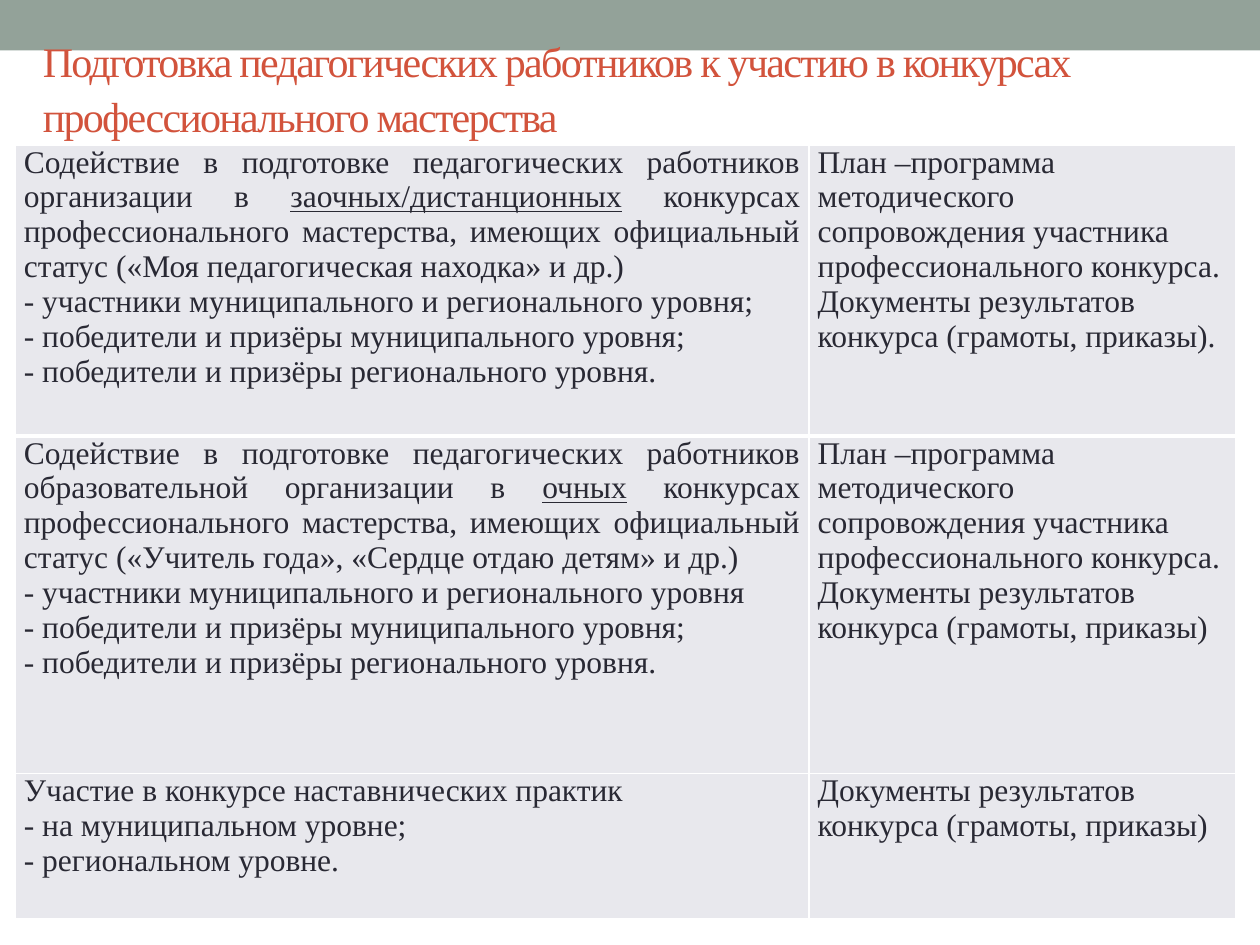
from dataclasses import dataclass

from lxml import etree
from pptx import Presentation
from pptx import util as u
from pptx.dml.color import RGBColor
from pptx.enum import shapes, text
from pptx.oxml import ns


@dataclass(frozen=True)
class Theme:
    font: str = "Times New Roman"
    bar: str = "93A299"
    title: str = "D2533C"
    body: str = "292934"
    cell: str = "E8E8ED"
    border: str = "FFFFFF"
    title_size: int = 24
    body_size: int = 18


theme = Theme()


def add_run(paragraph, words, size, color):
    run = paragraph.add_run()
    run.text = words
    run.font.name = theme.font
    run.font.size = u.Pt(size)
    run.font.color.rgb = RGBColor.from_string(color)
    return run


def set_borders(cell, widths):
    """Draw solid borders; widths maps the side letters L, R, T, B to points."""
    properties = cell._tc.get_or_add_tcPr()
    for position, side in enumerate("LRTB"):
        line = etree.Element(ns.qn(f"a:ln{side}"), w=str(u.Pt(widths[side])))
        fill = etree.SubElement(line, ns.qn("a:solidFill"))
        etree.SubElement(fill, ns.qn("a:srgbClr"), val=theme.border)
        properties.insert(position, line)


presentation = Presentation()
presentation.slide_width = u.Inches(10)
presentation.slide_height = u.Inches(7.5)
slide = presentation.slides.add_slide(presentation.slide_layouts[5])

# Title
title = slide.shapes.title
title.left, title.top = u.Inches(0.24), u.Inches(0.44)
title.width, title.height = u.Inches(9.72), u.Inches(0.49)
title.text_frame.word_wrap = True
title.text_frame.auto_size = text.MSO_AUTO_SIZE.NONE
title.text_frame.vertical_anchor = text.MSO_ANCHOR.MIDDLE
paragraph = title.text_frame.paragraphs[0]
paragraph.alignment = text.PP_ALIGN.LEFT
paragraph.line_spacing = 1.08
run = add_run(
    paragraph,
    "Подготовка педагогических работников к участию в конкурсах профессионального мастерства",
    theme.title_size, theme.title)
run.font._element.set("spc", "-100")

# Top bar, kept behind the title
bar = slide.shapes.add_shape(
    shapes.MSO_SHAPE.RECTANGLE, 0, 0, presentation.slide_width, u.Inches(0.4))
bar.shadow.inherit = False
bar.fill.solid()
bar.fill.fore_color.rgb = RGBColor.from_string(theme.bar)
bar.line.fill.background()
title._element.addprevious(bar._element)

# Table text: rows hold cells, cells hold paragraphs, paragraphs hold runs.
# The second run of a paragraph is the underlined one.
support = "Содействие в подготовке педагогических работников"
contests = " конкурсах профессионального мастерства, имеющих официальный статус"
participants = "- участники муниципального и регионального уровня"
winners = [["- победители и призёры муниципального уровня;"],
           ["- победители и призёры регионального уровня."]]
plan = "План –программа методического сопровождения участника профессионального конкурса."
documents = "Документы результатов конкурса (грамоты, приказы)"

rows = [
    ([[f"{support} организации в ", "заочных/дистанционных",
       f"{contests} («Моя педагогическая находка» и др.)"],
      [f"{participants};"], *winners],
     [[f"{plan} {documents}."]]),
    ([[f"{support} образовательной организации в ", "очных",
       f"{contests} («Учитель года», «Сердце отдаю детям» и др.)"],
      [participants], *winners],
     [[f"{plan} {documents}"]]),
    ([["Участие в конкурсе наставнических практик"],
      ["- на муниципальном уровне;"],
      ["- региональном уровне."]],
     [[documents]]),
]
column_widths = [6.3, 3.39]
row_heights = [2.31, 2.68, 1.15]
alignments = [text.PP_ALIGN.JUSTIFY, text.PP_ALIGN.LEFT]

table = slide.shapes.add_table(
    len(rows), len(column_widths), u.Inches(0.12), u.Inches(1.15),
    u.Inches(sum(column_widths)), u.Inches(sum(row_heights))).table
table.first_row = False
table.horz_banding = False
for column, width in zip(table.columns, column_widths):
    column.width = u.Inches(width)

for row_index, (row, height) in enumerate(zip(rows, row_heights)):
    table.rows[row_index].height = u.Inches(height)
    for column_index, paragraphs in enumerate(row):
        cell = table.cell(row_index, column_index)
        cell.margin_left = cell.margin_right = u.Inches(0.07)
        cell.margin_top = cell.margin_bottom = 0
        cell.vertical_anchor = text.MSO_ANCHOR.TOP
        cell.fill.solid()
        cell.fill.fore_color.rgb = RGBColor.from_string(theme.cell)
        # A thick line separates the first row from the second
        set_borders(cell, {"L": 1, "R": 1,
                           "T": 3 if row_index == 1 else 1,
                           "B": 3 if row_index == 0 else 1})
        for index, runs in enumerate(paragraphs):
            frame = cell.text_frame
            paragraph = frame.add_paragraph() if index else frame.paragraphs[0]
            paragraph.alignment = alignments[column_index]
            for run_index, words in enumerate(runs):
                run = add_run(paragraph, words, theme.body_size, theme.body)
                if run_index == 1:
                    run.font.underline = True

presentation.save("out.pptx")
